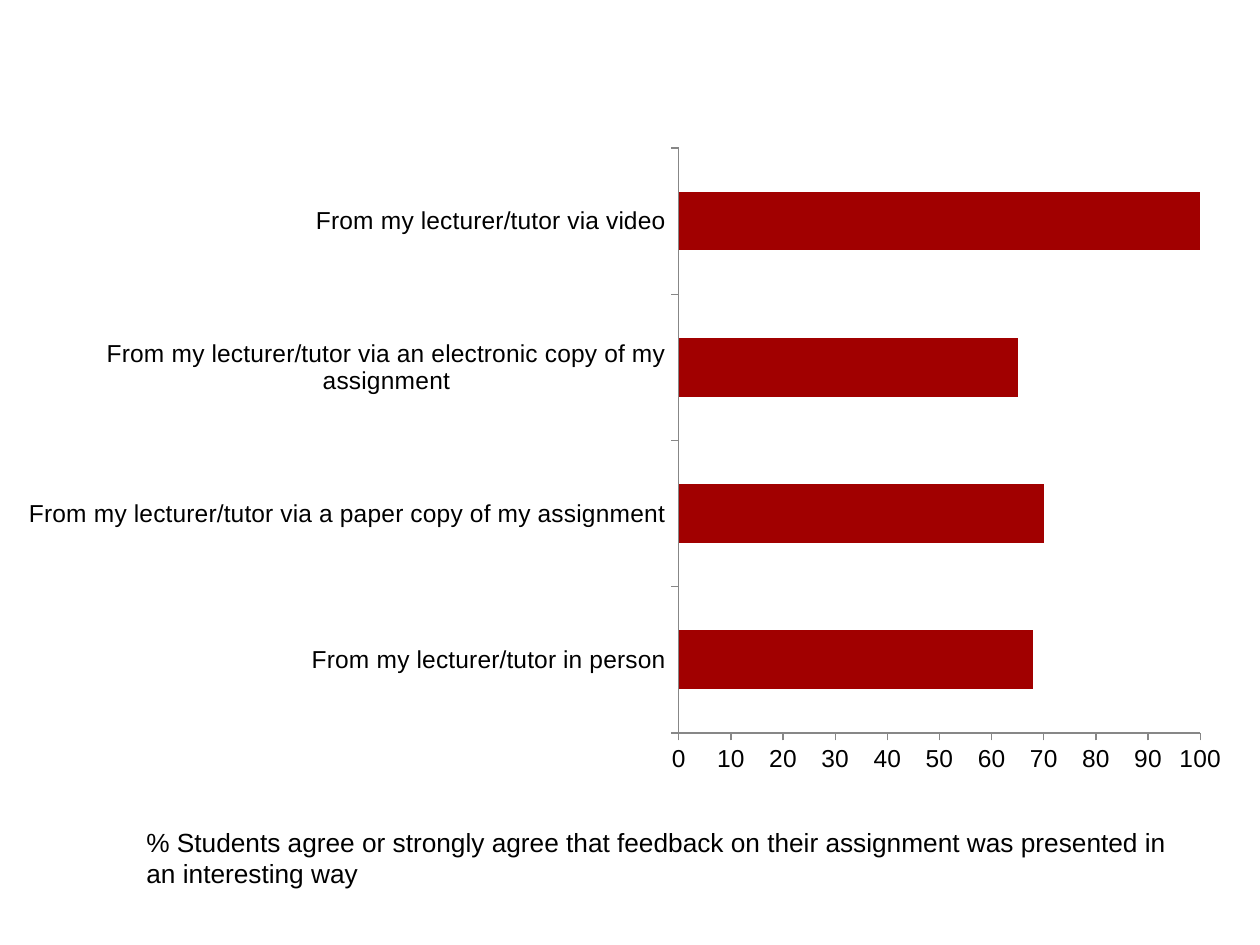
from dataclasses import dataclass

from pptx import Presentation
from pptx import util as u
from pptx.chart.data import CategoryChartData
from pptx.dml.color import RGBColor
from pptx.enum import chart as charts, text

EMU_PER_PX = 914400 / 126


@dataclass(frozen=True)
class Theme:
    font: str = "Arial"
    ink: RGBColor = RGBColor(0x00, 0x00, 0x00)
    bar: RGBColor = RGBColor(0xA1, 0x00, 0x00)
    axis: RGBColor = RGBColor(0x87, 0x87, 0x87)
    label_size: int = 14
    caption_size: int = 15


@dataclass(frozen=True)
class Frame:
    left: int
    top: int
    width: int
    height: int

    def emu(self) -> list[u.Emu]:
        return [px(v) for v in (self.left, self.top, self.width, self.height)]


@dataclass(frozen=True)
class Response:
    channel: str
    percent: int


THEME = Theme()
RESPONSES = [
    Response("From my lecturer/tutor in person", 68),
    Response("From my lecturer/tutor via a paper copy of my assignment", 70),
    Response("From my lecturer/tutor via an electronic copy of my assignment", 65),
    Response("From my lecturer/tutor via video", 100),
]
CAPTION = ("% Students agree or strongly agree that feedback on their "
           "assignment was presented in an interesting way")


def px(value: int) -> u.Emu:
    return u.Emu(round(value * EMU_PER_PX))


def style_font(font, size: int) -> None:
    font.name = THEME.font
    font.size = u.Pt(size)
    font.color.rgb = THEME.ink


def style_axis(axis) -> None:
    axis.has_major_gridlines = False
    axis.major_tick_mark = charts.XL_TICK_MARK.OUTSIDE
    axis.minor_tick_mark = charts.XL_TICK_MARK.NONE
    axis.format.line.color.rgb = THEME.axis
    axis.format.line.width = u.Pt(0.75)


def add_response_chart(page, frame: Frame, responses: list[Response]) -> None:
    data = CategoryChartData()
    data.categories = [response.channel for response in responses]
    data.add_series("Series 1", [response.percent for response in responses])
    chart = page.shapes.add_chart(
        charts.XL_CHART_TYPE.BAR_CLUSTERED, *frame.emu(), data).chart
    chart.has_legend = False
    chart.has_title = False
    style_font(chart.font, THEME.label_size)
    for axis in (chart.category_axis, chart.value_axis):
        style_axis(axis)
    chart.value_axis.minimum_scale = 0
    chart.value_axis.maximum_scale = 100
    chart.value_axis.major_unit = 10
    plot = chart.plots[0]
    plot.vary_by_categories = False
    plot.gap_width = 150
    fill = plot.series[0].format.fill
    fill.solid()
    fill.fore_color.rgb = THEME.bar


def add_caption(page, frame: Frame, wording: str) -> None:
    box = page.shapes.add_textbox(*frame.emu())
    box.text_frame.word_wrap = True
    box.text_frame.auto_size = text.MSO_AUTO_SIZE.SHAPE_TO_FIT_TEXT
    para = box.text_frame.paragraphs[0]
    span = para.add_run()
    span.text = wording
    style_font(span.font, THEME.caption_size)


def main() -> None:
    deck = Presentation()
    deck.slide_width, deck.slide_height = px(1260), px(945)
    page = deck.slides.add_slide(deck.slide_layouts.get_by_name("Blank"))
    add_response_chart(page, Frame(4, 135, 1242, 651), RESPONSES)
    add_caption(page, Frame(134, 820, 1062, 77), CAPTION)
    deck.save("out.pptx")


if __name__ == "__main__":
    main()
